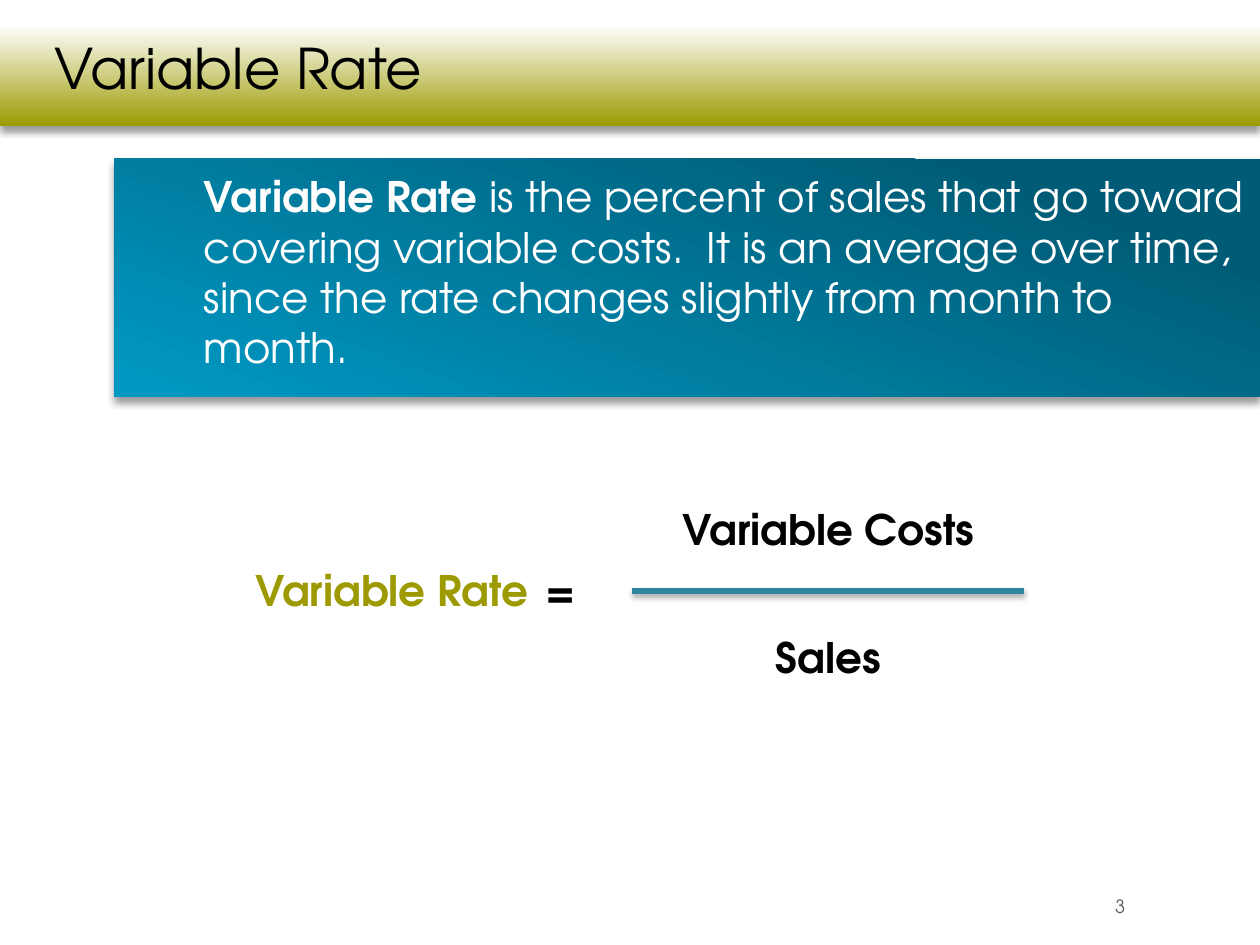
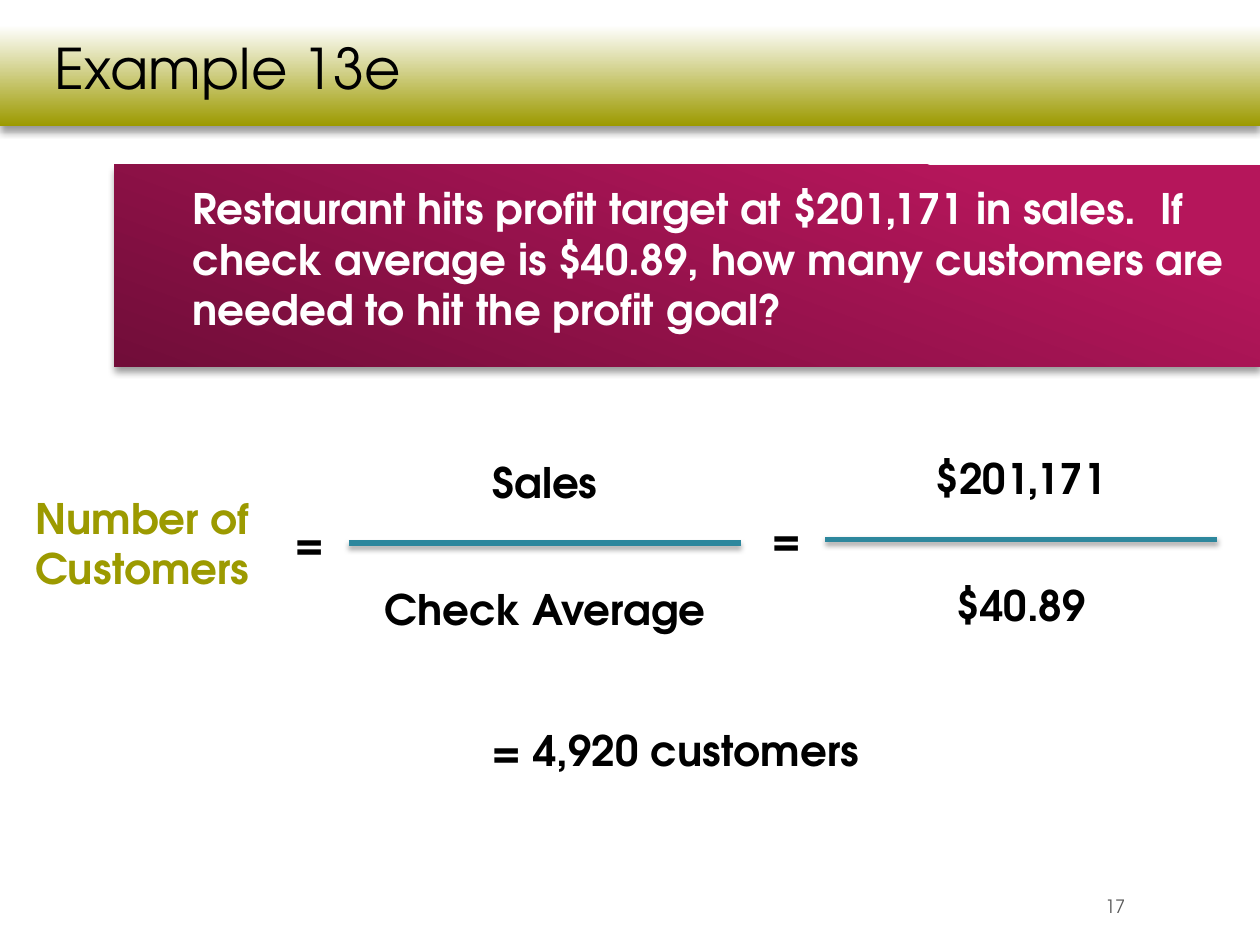
from dataclasses import dataclass

from lxml import etree
from pptx import Presentation
from pptx.dml.color import RGBColor
from pptx.enum.shapes import MSO_CONNECTOR as Connector, MSO_SHAPE as Shape
from pptx.enum.text import MSO_ANCHOR as Anchor, MSO_AUTO_SIZE as AutoSize, PP_ALIGN as Align
from pptx.oxml.ns import qn
from pptx.util import Emu, Pt

PX = 9144  # 100 px to the inch
TITLE_ONLY = 5


@dataclass(frozen=True)
class Theme:
    font: str = "TeX Gyre Adventor"
    white: str = "FFFFFF"
    black: str = "000000"
    gray: str = "595959"
    olive: str = "9C9A00"
    rule: str = "2D879D"
    blue: tuple = ("005C76", "0099C4")
    berry: tuple = ("B5165B", "710D39")
    title_size: float = 32
    body_size: float = 24
    number_size: float = 10.5
    rule_width: float = 3


def px(*lengths):
    return [Emu(length * PX) for length in lengths]


def set_all(target, values):
    for name, value in values.items():
        setattr(target, name, value)


class Deck:
    def __init__(self, theme):
        self.theme = theme
        self.presentation = Presentation()
        width, height = px(1000, 750)
        set_all(self.presentation, {"slide_width": width, "slide_height": height})
        self.slide = None

    # Shared frame: band, title and slide number
    def new_slide(self, title, number):
        theme = self.theme
        layout = self.presentation.slide_layouts[TITLE_ONLY]
        self.slide = self.presentation.slides.add_slide(layout)
        placeholder = self.slide.shapes.title
        band = self.gradient_box((0, 0, 1000, 100), (theme.white, theme.olive), 20, 90)
        placeholder.element.addprevious(band.element)

        left, top, width, height = px(33, 0, 933, 100)
        set_all(placeholder, {"left": left, "top": top, "width": width, "height": height})
        side, above, below = px(10, 22, 5)
        set_all(placeholder.text_frame, {
            "margin_left": side, "margin_right": side,
            "margin_top": above, "margin_bottom": below})
        self.fill_text(placeholder.text_frame, [(title, False)], theme.title_size, theme.black,
                       align=Align.LEFT, anchor=Anchor.MIDDLE, spacing=0.8)
        self.text((785, 699, 118, 40), [(str(number), False)], theme.number_size, theme.gray,
                  align=Align.RIGHT, anchor=Anchor.MIDDLE)

    # Text
    def fill_text(self, frame, runs, size, color, align=Align.LEFT, anchor=Anchor.TOP,
                  wrap=True, spacing=None):
        set_all(frame, {"word_wrap": wrap, "auto_size": AutoSize.NONE, "vertical_anchor": anchor})
        paragraph = frame.paragraphs[0]
        set_all(paragraph, {"alignment": align, "line_spacing": spacing})
        for words, bold in runs:
            run = paragraph.add_run()
            run.text = words
            set_all(run.font, {"name": self.theme.font, "size": Pt(size), "bold": bold})
            run.font.color.rgb = RGBColor.from_string(color)

    def text(self, box, runs, size, color, **layout):
        shape = self.slide.shapes.add_textbox(*px(*box))
        self.fill_text(shape.text_frame, runs, size, color, **layout)

    def label(self, box, words, color=None, wrap=False):
        self.text(box, [(words, True)], self.theme.body_size, color or self.theme.black,
                  align=Align.CENTER, wrap=wrap)

    # Boxes
    def add_shadow(self, effects, opacity, blur, distance):
        shadow = etree.SubElement(effects, qn("a:outerShdw"), {
            "blurRad": str(Pt(blur)), "dist": str(Pt(distance)),
            "dir": "5400000", "rotWithShape": "0"})
        color = etree.SubElement(shadow, qn("a:srgbClr"), val=self.theme.black)
        etree.SubElement(color, qn("a:alpha"), val=str(opacity * 1000))

    def gradient_box(self, box, colors, start, angle):
        shape = self.slide.shapes.add_shape(Shape.RECTANGLE, *px(*box))
        shape.line.fill.background()
        shape.fill.gradient()
        shape.fill.gradient_angle = 360 - angle
        for stop, color, position in zip(shape.fill.gradient_stops, colors, (start, 100)):
            stop.color.rgb = RGBColor.from_string(color)
            stop.position = position / 100
        shape.shadow.inherit = False
        self.add_shadow(shape.element.spPr.find(qn("a:effectLst")), 40, 4, 3)
        return shape

    def panel(self, top, height, colors, text_box, runs):
        self.gradient_box((91, top, 909, height), colors, 17, 110)
        self.text(text_box, runs, self.theme.body_size, self.theme.white, anchor=Anchor.MIDDLE)

    # Equals sign, numerator, rule and denominator, placed from the left end of the rule
    def fraction(self, left, middle, numerator, denominator, equals_gap=31):
        width = 311
        self.label((left - equals_gap - 20, middle - 26, 40, 51), "=")
        self.label((left, middle - 74, width, 51), numerator)
        self.label((left, middle + 27, width, 51), denominator)
        rule = self.slide.shapes.add_connector(
            Connector.STRAIGHT, *px(left, middle, left + width, middle))
        rule.line.color.rgb = RGBColor.from_string(self.theme.rule)
        rule.line.width = Pt(self.theme.rule_width)
        effects = etree.SubElement(rule.element.spPr, qn("a:effectLst"))
        self.add_shadow(effects, 35, 3.1, 1.8)


def main():
    theme = Theme()
    deck = Deck(theme)

    # Definition of the variable rate
    deck.new_slide("Variable Rate", 3)
    deck.label((190, 443, 242, 51), "Variable Rate", theme.olive)
    deck.fraction(502, 469, "Variable Costs", "Sales", equals_gap=57)
    deck.panel(126, 189, theme.blue, (152, 131, 846, 169), [
        ("Variable Rate ", True),
        ("is the percent of sales that go toward covering variable costs.  It is an average "
         "over time, since the rate changes slightly from month to month.", False)])

    # Worked example: customers needed
    deck.new_slide("Example 13e", 17)
    deck.panel(131, 160, theme.berry, (143, 146, 846, 118), [
        ("Restaurant hits profit target at $201,171 in sales.  If check average is $40.89, "
         "how many customers are needed to hit the profit goal?", True)])
    deck.label((0, 386, 226, 91), "Number of Customers", theme.olive, wrap=True)
    deck.fraction(277, 431, "Sales", "Check Average")
    deck.fraction(655, 428, "$201,171", "$40.89")
    deck.text((380, 573, 325, 58), [("= 4,920 customers", True)], theme.body_size, theme.black,
              spacing=0.95)

    deck.presentation.save("out.pptx")


if __name__ == "__main__":
    main()
